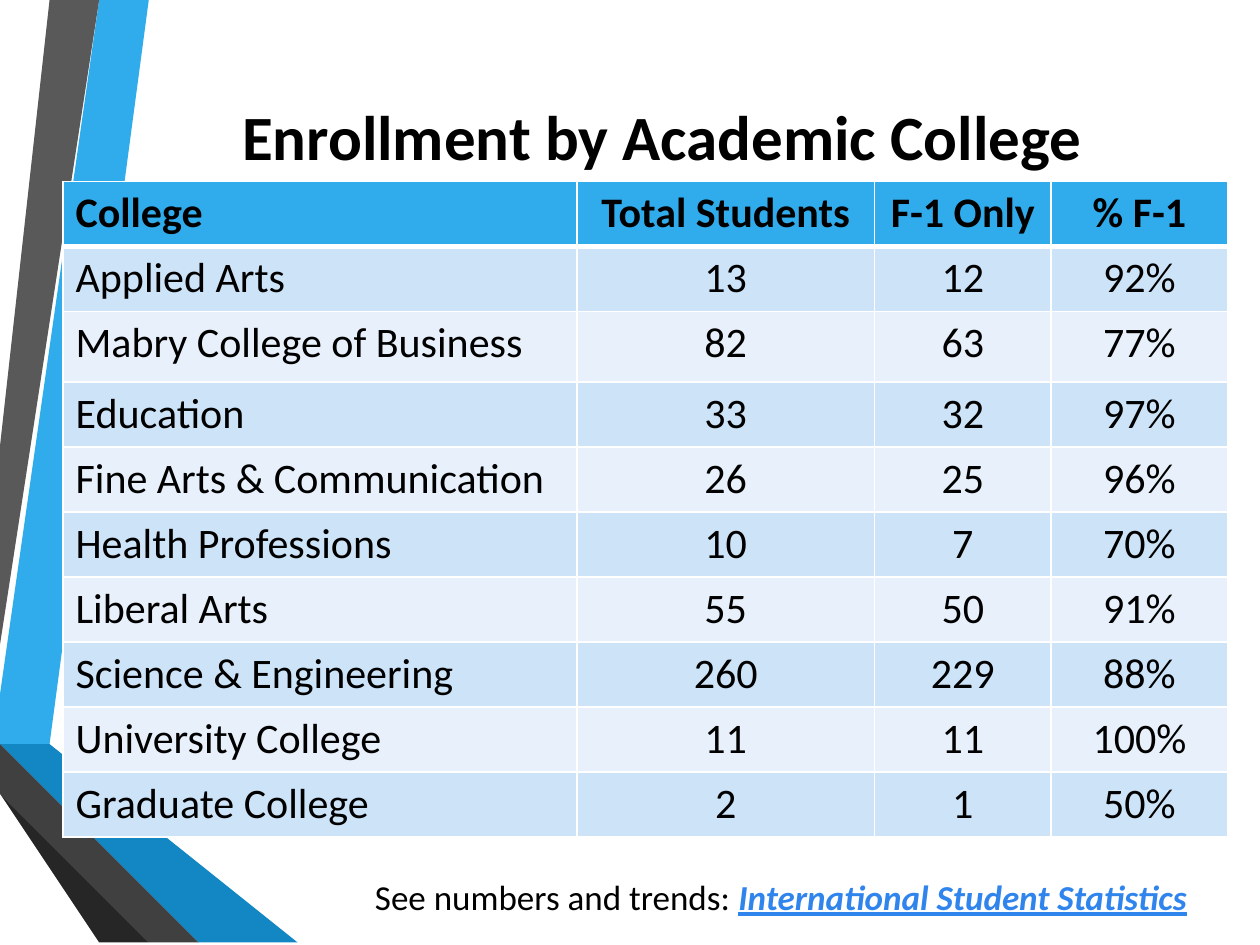
from lxml import etree
from pptx import Presentation
from pptx.dml.color import RGBColor
from pptx.enum.text import MSO_ANCHOR, MSO_AUTO_SIZE, PP_ALIGN
from pptx.oxml.ns import qn
from pptx.util import Cm, Pt

LEFT, CENTER = PP_ALIGN.LEFT, PP_ALIGN.CENTER
BOTTOM, NO_FIT = MSO_ANCHOR.BOTTOM, MSO_AUTO_SIZE.NONE

# Content
TITLE = "Enrollment by Academic College"
HEADER = ("College", "Total Students", "F-1 Only", "% F-1")
COLLEGES = [
    ("Applied Arts", 13, 12, "92%"),
    ("Mabry College of Business", 82, 63, "77%"),
    ("Education", 33, 32, "97%"),
    ("Fine Arts & Communication", 26, 25, "96%"),
    ("Health Professions", 10, 7, "70%"),
    ("Liberal Arts", 55, 50, "91%"),
    ("Science & Engineering", 260, 229, "88%"),
    ("University College", 11, 11, "100%"),
    ("Graduate College", 2, 1, "50%"),
]
NOTE_LEAD = "See numbers and trends: "
NOTE_SOURCE = "International Student Statistics"

THEME = {
    "font": "Calibri", "title": 36, "table": 24, "note": 20,
    "text": "000000", "accent": "30ACEC", "link": "3085ED",
    "bands": ("CDE3F8", "E8F1FB"), "rule": "FFFFFF",
}

# Ribbon outlines in cm, back to front
RIBBONS = [
    (THEME["accent"], [(0, 13.82), (0, 14.6), (0.56, 14.7), (2.97, 0), (2.26, 0)]),
    ("595959", [(2.11, 0), (1.4, 0), (0, 8.53), (0, 12.85)]),
    ("262626", [(0, 15.72), (0, 15.77), (2.36, 19.05), (2.51, 19.05)]),
    ("0C5A82", [(0, 14.7), (0, 14.73), (3.96, 19.05), (4.14, 19.05)]),
    ("1287C3", [(0, 14.7), (4.14, 19.05), (5.92, 19.05), (0.56, 14.7), (0, 14.6)]),
    ("404040", [(0, 15.72), (2.51, 19.05), (3.84, 19.05), (0, 14.88)]),
]

# Layout in cm
TITLE_BOX = (2.97, 2.06, 20.75, 1.55)
NOTE_BOX = (6.12, 17.58, 19.25, 1.04)
TABLE_LEFT, TABLE_TOP = 1.27, 3.66
COL_WIDTHS = (10.36, 6, 3.56, 3.56)
ROW_HEIGHT, TALL_HEIGHT, TALL_ROW = 1.31, 1.42, 2


def rgb(color):
    return RGBColor.from_string(color)


def add_run(p, text, size, color=THEME["text"], bold=False, italic=False, underline=False):
    r = p.add_run()
    r.text = str(text)
    r.font.name, r.font.size = THEME["font"], Pt(size)
    r.font.bold, r.font.italic, r.font.underline = bold, italic, underline
    r.font.color.rgb = rgb(color)


def place(sp, box):
    """Position a one-paragraph text shape and return its paragraph."""
    sp.left, sp.top, sp.width, sp.height = map(Cm, box)
    tf = sp.text_frame
    tf.word_wrap, tf.auto_size, tf.vertical_anchor = True, NO_FIT, BOTTOM
    p = tf.paragraphs[0]
    p.alignment = CENTER
    return p


def set_border(cell, side, points):
    ln = etree.SubElement(cell._tc.get_or_add_tcPr(), qn(f"a:ln{side}"), w=str(Pt(points)))
    fill = etree.SubElement(ln, qn("a:solidFill"))
    etree.SubElement(fill, qn("a:srgbClr"), val=THEME["rule"])


def add_ribbon(s, color, points):
    builder = s.shapes.build_freeform(*points[0], scale=Cm(1))
    builder.add_line_segments(points[1:], close=True)
    sp = builder.convert_to_shape()
    sp.shadow.inherit = False
    sp.fill.solid()
    sp.fill.fore_color.rgb = rgb(color)
    sp.line.fill.background()


def add_college_table(s):
    rows = [HEADER, *COLLEGES]
    heights = [TALL_HEIGHT if i == TALL_ROW else ROW_HEIGHT for i in range(len(rows))]
    table = s.shapes.add_table(
        len(rows), len(HEADER), Cm(TABLE_LEFT), Cm(TABLE_TOP),
        Cm(sum(COL_WIDTHS)), Cm(sum(heights))).table
    table.horz_banding = False
    for column, width in zip(table.columns, COL_WIDTHS):
        column.width = Cm(width)
    for i, values in enumerate(rows):
        table.rows[i].height = Cm(heights[i])
        is_header = i == 0
        fill = THEME["accent"] if is_header else THEME["bands"][(i - 1) % 2]
        # The rule under the header is heavier than the others
        rules = {"L": 1, "R": 1, "T": 3 if i == 1 else 1, "B": 3 if is_header else 1}
        for j, value in enumerate(values):
            cell = table.cell(i, j)
            for side, points in rules.items():
                set_border(cell, side, points)
            cell.fill.solid()
            cell.fill.fore_color.rgb = rgb(fill)
            p = cell.text_frame.paragraphs[0]
            p.alignment = CENTER if j else LEFT
            add_run(p, value, THEME["table"], bold=is_header)


def main():
    prs = Presentation()
    prs.slide_width, prs.slide_height = Cm(25.4), Cm(19.05)
    s = prs.slides.add_slide(prs.slide_layouts[5])

    # Ribbons
    for color, points in RIBBONS:
        add_ribbon(s, color, points)

    # Title, brought in front of the ribbons
    title = s.shapes.title
    title.element.getparent().append(title.element)
    add_run(place(title, TITLE_BOX), TITLE, THEME["title"], bold=True)

    # Closing note
    p = place(s.shapes.add_textbox(0, 0, 0, 0), NOTE_BOX)
    add_run(p, NOTE_LEAD, THEME["note"])
    add_run(p, NOTE_SOURCE, THEME["note"], THEME["link"], bold=True, italic=True, underline=True)

    # Table
    add_college_table(s)

    prs.save("out.pptx")


if __name__ == "__main__":
    main()
